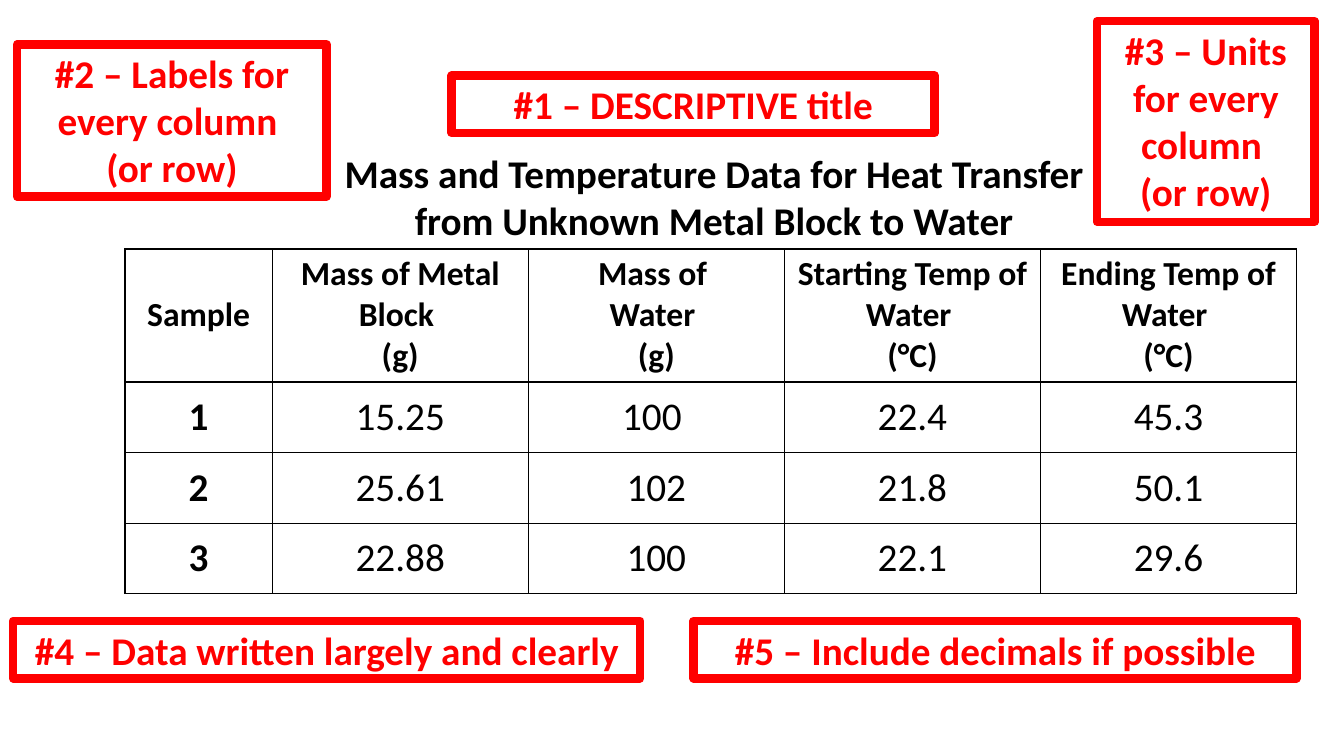
import pptx
import pptx.util
import pptx.dml.color
import pptx.enum.shapes
import pptx.enum.text
import pptx.oxml
import pptx.oxml.ns

Inches = pptx.util.Inches
Pt = pptx.util.Pt
ANCHOR = pptx.enum.text.MSO_ANCHOR
AUTO_SIZE = pptx.enum.text.MSO_AUTO_SIZE

BLACK = pptx.dml.color.RGBColor(0x00, 0x00, 0x00)
WHITE = pptx.dml.color.RGBColor(0xFF, 0xFF, 0xFF)
RED = pptx.dml.color.RGBColor(0xFF, 0x00, 0x00)

TITLE = "Mass and Temperature Data for Heat Transfer from Unknown Metal Block to Water"
RULES = [
    ("#1 – DESCRIPTIVE title", (4.48, 0.75, 4.79, 0.57)),
    ("#4 – Data written largely and clearly", (0.13, 6.16, 6.22, 0.57)),
    ("#2 – Labels for every column \n(or row)", (0.17, 0.44, 3.07, 1.51)),
    ("#3 – Units for every column \n(or row)", (10.88, 0.21, 2.16, 1.99)),
    ("#5 – Include decimals if possible", (6.88, 6.16, 5.98, 0.57)),
]
MEASUREMENTS = [
    ["Sample", "Mass of Metal Block \n(g)", "Mass of \nWater \n(g)",
     "Starting Temp of Water \n(°C)", "Ending Temp of Water \n(°C)"],
    ["1", "15.25", "100 ", "22.4", "45.3"],
    ["2", "25.61", "102", "21.8", "50.1"],
    ["3", "22.88", "100", "22.1", "29.6"],
]
COLUMN_WIDTHS = [1.46] + [2.54] * 4
ROW_HEIGHTS = [1.29] + [0.7] * 3


class SlideBuilder:
    """Holds the text style and the slide being built."""

    def __init__(self, page):
        self.page = page
        self.style = {"name": "Calibri", "size": Pt(28), "bold": True}

    def fill_text(self, frame, text, color, **changes):
        """Put one centred paragraph in a frame; newlines become line breaks."""
        frame.word_wrap = True
        para = frame.paragraphs[0]
        para.text = text
        para.alignment = pptx.enum.text.PP_ALIGN.CENTER
        for span in para.runs:
            for name, value in {**self.style, **changes}.items():
                setattr(span.font, name, value)
            span.font.color.rgb = color

    def title(self, text, place):
        box = self.page.shapes.title
        for name, value in zip(("left", "top", "width", "height"), place):
            setattr(box, name, Inches(value))
        self.fill_text(box.text_frame, text, BLACK)
        box.text_frame.auto_size = AUTO_SIZE.NONE
        box.text_frame.vertical_anchor = ANCHOR.TOP

    def callout(self, text, place):
        box = self.page.shapes.add_shape(
            pptx.enum.shapes.MSO_SHAPE.RECTANGLE, *map(Inches, place))
        box.shadow.inherit = False
        box.fill.solid()
        box.fill.fore_color.rgb = WHITE
        box.line.color.rgb = RED
        box.line.width = Pt(6)
        self.fill_text(box.text_frame, text, RED)
        box.text_frame.vertical_anchor = ANCHOR.TOP
        box.text_frame.auto_size = AUTO_SIZE.SHAPE_TO_FIT_TEXT

    def border(self, cell):
        properties = cell._tc.get_or_add_tcPr()
        for position, side in enumerate(("lnL", "lnR", "lnT", "lnB")):
            properties.insert(position, pptx.oxml.parse_xml(
                f'<a:{side} {pptx.oxml.ns.nsdecls("a")} w="{Pt(1)}"><a:solidFill>'
                f'<a:srgbClr val="{BLACK}"/></a:solidFill></a:{side}>'))

    def table(self, rows, left, top, widths, heights):
        grid = self.page.shapes.add_table(
            len(rows), len(widths), Inches(left), Inches(top),
            Inches(sum(widths)), Inches(sum(heights))).table
        grid.first_row = grid.horz_banding = False
        for column, width in zip(grid.columns, widths):
            column.width = Inches(width)
        for row, height in zip(grid.rows, heights):
            row.height = Inches(height)
        for r, texts in enumerate(rows):
            for c, text in enumerate(texts):
                cell = grid.cell(r, c)
                cell.fill.background()
                cell.vertical_anchor = ANCHOR.MIDDLE
                self.border(cell)
                self.fill_text(cell.text_frame, text, BLACK,
                               size=Pt(28 if r else 24), bold=r == 0 or c == 0)


def main():
    deck = pptx.Presentation()
    deck.slide_width, deck.slide_height = Inches(13.33), Inches(7.5)
    title_only = deck.slide_layouts[5]
    builder = SlideBuilder(deck.slides.add_slide(title_only))
    builder.title(TITLE, (3.27, 1.43, 7.62, 1.04))
    builder.table(MEASUREMENTS, 1.24, 2.47, COLUMN_WIDTHS, ROW_HEIGHTS)
    for text, place in RULES:
        builder.callout(text, place)
    deck.save("out.pptx")


if __name__ == "__main__":
    main()
